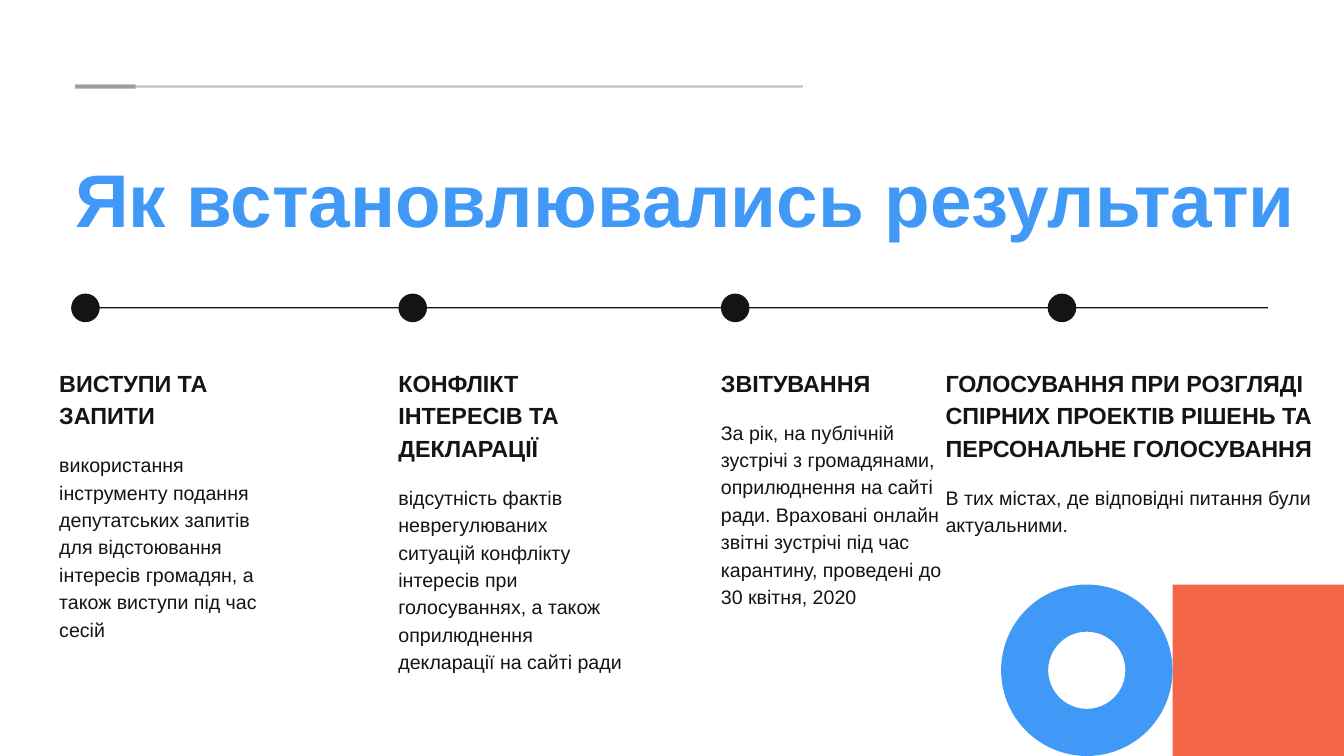
from lxml import etree
from pptx import Presentation
from pptx.dml.color import RGBColor
from pptx.enum.shapes import MSO_SHAPE as SHAPE
from pptx.enum.text import MSO_ANCHOR as ANCHOR, MSO_AUTO_SIZE as AUTO, PP_ALIGN as ALIGN
from pptx.oxml.ns import qn
from pptx.util import Cm, Pt

BLUE = RGBColor(0x40, 0x99, 0xF7)
ORANGE = RGBColor(0xF3, 0x66, 0x48)
INK = RGBColor(0x14, 0x14, 0x14)

WIDTH, HEIGHT = 50.8, 28.58
MARGIN = 2.84
TILE = 6.48           # corner square and ring
RING = 1.78           # thickness of the ring
DOT = 1.08
HEAD_TOP = 13.77
HEAD_LINE, BODY_LINE = 1.23, 1.04

# column left, width, dot left, heading, heading lines, text, text lines
COLUMNS = [
    (2.24, 8.48, 2.69, "ВИСТУПИ ТА ЗАПИТИ", 2,
     "використання інструменту подання депутатських запитів для відстоювання "
     "інтересів громадян, а також виступи під час сесій", 7),
    (15.06, 8.48, 15.06, "КОНФЛІКТ ІНТЕРЕСІВ ТА ДЕКЛАРАЦІЇ", 3,
     "відсутність фактів неврегулюваних ситуацій конфлікту інтересів при "
     "голосуваннях, а також оприлюднення декларації на сайті ради", 7),
    (27.25, 8.48, 27.25, "ЗВІТУВАННЯ", 1,
     "За рік, на публічній зустрічі з громадянами, оприлюднення на сайті ради. "
     "Враховані онлайн звітні зустрічі під час карантину, проведені до "
     "30 квітня, 2020", 7),
    (35.74, 15.06, 39.6,
     "ГОЛОСУВАННЯ ПРИ РОЗГЛЯДІ СПІРНИХ ПРОЕКТІВ РІШЕНЬ ТА ПЕРСОНАЛЬНЕ ГОЛОСУВАННЯ", 3,
     "В тих містах, де відповідні питання були актуальними.", 2),
]


def write(tf, text, size=21, leading=29.4, color=INK, bold=False):
    """Fill a text frame with one formatted paragraph."""
    tf.word_wrap = True
    tf.auto_size = AUTO.NONE
    tf.vertical_anchor = ANCHOR.TOP
    tf.margin_left = tf.margin_right = tf.margin_top = tf.margin_bottom = 0
    p = tf.paragraphs[0]
    p.alignment = ALIGN.LEFT
    p.line_spacing = Pt(leading)
    p.space_before = Pt(0)
    r = p.add_run()
    r.text = text
    r.font.name = "Arial"
    r.font.size = Pt(size)
    r.font.bold = bold
    r.font.color.rgb = color


class Page:
    """The current slide and its kinds of element."""

    def __init__(self, prs):
        self.slide = prs.slides.add_slide(prs.slide_layouts[5])

    def title(self, text, x, y, w, h):
        sp = self.slide.shapes.title
        sp.left, sp.top, sp.width, sp.height = Cm(x), Cm(y), Cm(w), Cm(h)
        write(sp.text_frame, text, size=80, leading=96, color=BLUE, bold=True)

    def text(self, text, x, y, w, h, **style):
        sp = self.slide.shapes.add_textbox(Cm(x), Cm(y), Cm(w), Cm(h))
        write(sp.text_frame, text, **style)

    def shape(self, kind, x, y, w, h, color=INK, alpha=None):
        sp = self.slide.shapes.add_shape(kind, Cm(x), Cm(y), Cm(w), Cm(h))
        sp.shadow.inherit = False
        sp.line.fill.background()
        sp.fill.solid()
        sp.fill.fore_color.rgb = color
        if alpha is not None:
            clr = sp.fill._xPr.find(".//" + qn("a:srgbClr"))
            etree.SubElement(clr, qn("a:alpha")).set("val", str(alpha * 1000))
        return sp


def main():
    prs = Presentation()
    prs.slide_width, prs.slide_height = Cm(WIDTH), Cm(HEIGHT)
    page = Page(prs)

    # Corner decoration
    corner_x, corner_y = WIDTH - TILE, HEIGHT - TILE
    page.shape(SHAPE.RECTANGLE, corner_x, corner_y, TILE, TILE, ORANGE)
    ring = page.shape(SHAPE.DONUT, corner_x - TILE, corner_y, TILE, TILE, BLUE)
    ring.adjustments[0] = RING / TILE

    # Title with the rule above it
    page.shape(SHAPE.RECTANGLE, MARGIN, 3.23, 27.51, 0.08, alpha=26)
    page.shape(SHAPE.RECTANGLE, MARGIN, 3.18, 2.29, 0.18, alpha=26)
    page.title("Як встановлювались результати", MARGIN, 5.77, 47.29, 3.38)

    # Timeline and its columns
    page.shape(SHAPE.RECTANGLE, MARGIN, 11.61, 45.08, 0.05)
    for x, w, dot_x, head, head_lines, body, body_lines in COLUMNS:
        page.shape(SHAPE.OVAL, dot_x, 11.1, DOT, DOT)
        head_h = head_lines * HEAD_LINE
        page.text(head, x, HEAD_TOP, w, head_h, size=25, leading=35, bold=True)
        page.text(body, x, HEAD_TOP + head_h + 0.75, w, body_lines * BODY_LINE)

    prs.save("out.pptx")


if __name__ == "__main__":
    main()
